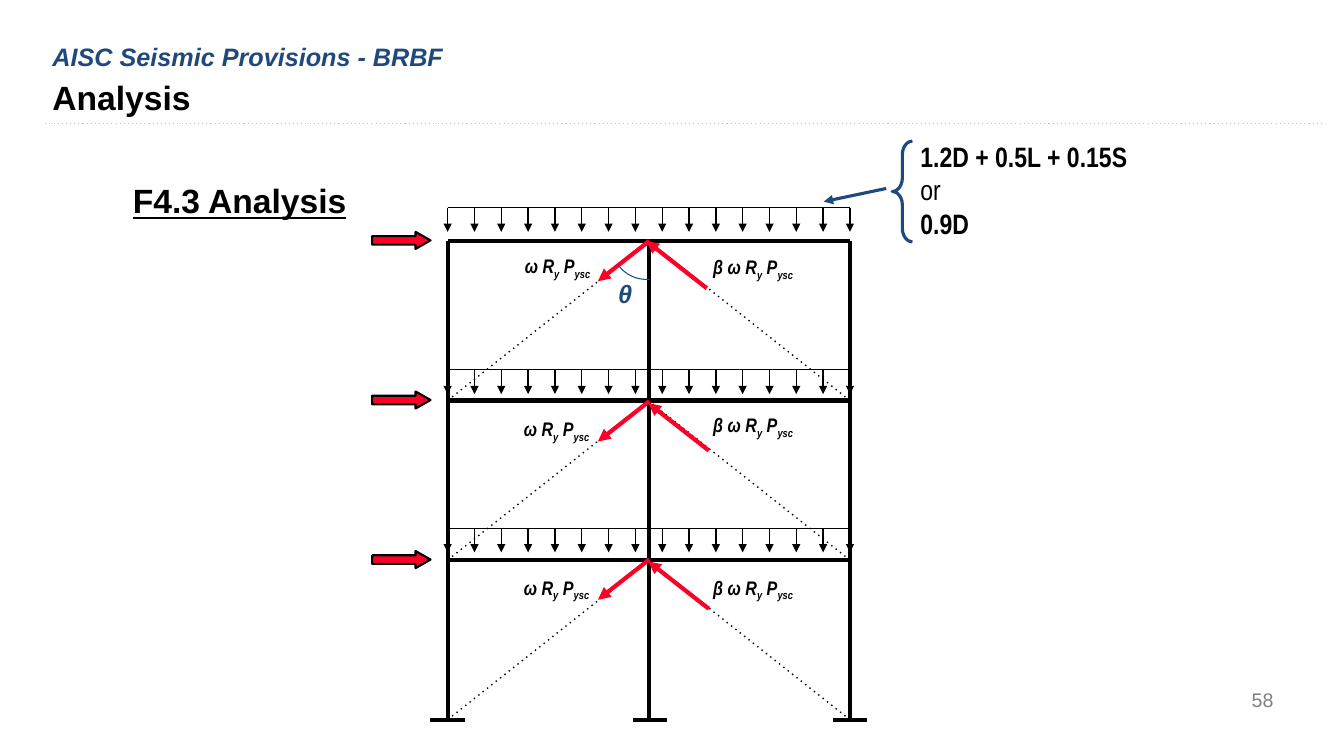
import pptx
import pptx.dml.color
import pptx.enum.shapes
import pptx.enum.text
import pptx.oxml
import pptx.oxml.ns
import pptx.util
from pptx.util import Inches

BLACK, NAVY, RED, GREY = "000000", "1F497D", "FC0128", "7F7F7F"
SHAPE = pptx.enum.shapes.MSO_SHAPE
ALIGN = pptx.enum.text.PP_ALIGN
ANCHOR = pptx.enum.text.MSO_ANCHOR
TOP, BASE, STORIES = 2.39, 7.14, 3
LEFT, CENTER, RIGHT = 4.44, 6.44, 8.43
STORY = (BASE - TOP) / STORIES


def color(value):
    """Turn a hex string into a colour."""
    return pptx.dml.color.RGBColor.from_string(value)


def add_run(para, text, size, tint=BLACK, font="Arial", bold=True, italic=False,
            underline=False, subscript=False):
    """Add one formatted run to a paragraph."""
    span = para.add_run()
    span.text = text
    span.font.size = pptx.util.Pt(size)
    span.font.name = font
    span.font.bold = bold
    span.font.italic = italic
    span.font.underline = underline
    span.font.color.rgb = color(tint)
    if subscript:
        span._r.get_or_add_rPr().set("baseline", "-25000")


def set_frame(shape, box, align=ALIGN.LEFT, anchor=ANCHOR.TOP):
    """Place a text shape in its box and return its first paragraph."""
    shape.left, shape.top, shape.width, shape.height = map(Inches, box)
    frame = shape.text_frame
    frame.word_wrap = True
    frame.auto_size = pptx.enum.text.MSO_AUTO_SIZE.NONE
    frame.vertical_anchor = anchor
    para = frame.paragraphs[0]
    para.alignment = align
    para.space_before = pptx.util.Pt(0)
    return para


def add_text(page, box, align=ALIGN.LEFT, anchor=ANCHOR.TOP):
    """Add a text box and return its first paragraph."""
    return set_frame(page.shapes.add_textbox(*map(Inches, box)), box, align, anchor)


def add_line(shapes, start, end, width=3, tint=BLACK, dotted=False, arrow=None):
    """Add a straight line, arrow being headEnd or tailEnd."""
    line = shapes.add_connector(pptx.enum.shapes.MSO_CONNECTOR.STRAIGHT,
                                *map(Inches, (*start, *end)))
    line.line.color.rgb = color(tint)
    line.line.width = pptx.util.Pt(width)
    properties = line.element.spPr
    outline = properties.find(pptx.oxml.ns.qn("a:ln"))
    namespace = pptx.oxml.ns.nsdecls("a")
    if dotted:
        outline.append(pptx.oxml.parse_xml(f'<a:prstDash {namespace} val="dot"/>'))
    if arrow:
        outline.append(pptx.oxml.parse_xml(f'<a:{arrow} {namespace} type="triangle"/>'))
    properties.append(pptx.oxml.parse_xml(f"<a:effectLst {namespace}/>"))


def add_preset(page, kind, box, adjustments, tint, width, fill=None):
    """Add an outlined preset shape, filled if a fill is given."""
    shape = page.shapes.add_shape(kind, *map(Inches, box))
    shape.shadow.inherit = False
    for index, value in enumerate(adjustments):
        shape.adjustments[index] = value
    if fill:
        shape.fill.solid()
        shape.fill.fore_color.rgb = color(fill)
    else:
        shape.fill.background()
    shape.line.color.rgb = color(tint)
    shape.line.width = pptx.util.Pt(width)
    return shape


def add_header(page, left, top, width):
    """Fill the title and the line of context above it."""
    add_line(page.shapes, (left + 0.03, top + 0.87), (left + 12.7, top + 0.87),
             0.75, "BFBFBF", dotted=True)
    para = set_frame(page.shapes.title, (left, top + 0.35, width, 0.44))
    add_run(para, "Analysis", 24)
    para = set_frame(page.placeholders[1], (left, top, width, 0.31))
    bullet = para._p.get_or_add_pPr()
    bullet.set("marL", "0")
    bullet.set("indent", "0")
    bullet.append(pptx.oxml.parse_xml(f'<a:buNone {pptx.oxml.ns.nsdecls("a")}/>'))
    add_run(para, "AISC Seismic Provisions - BRBF", 18, NAVY, italic=True)


def add_bay(page, outer, inner):
    """Draw the columns, beams and dotted braces of one bay."""
    bay = page.shapes.add_group_shape().shapes
    for story in reversed(range(STORIES)):
        upper = TOP + story * STORY
        lower = upper + STORY
        add_line(bay, (outer, lower), (outer, upper))
        add_line(bay, (outer, upper), (inner, upper))
        add_line(bay, (inner, upper), (outer, lower), 1, dotted=True)


def add_frame(page):
    """Draw the two bays, the middle column and the supports."""
    for story in range(STORIES):
        upper = TOP + story * STORY
        add_line(page.shapes, (CENTER, upper + STORY), (CENTER, upper))
    add_bay(page, LEFT, CENTER)
    add_bay(page, RIGHT, CENTER - 0.01)
    for column in (LEFT, CENTER + 0.01, RIGHT):
        add_line(page.shapes, (column - 0.17, BASE), (column + 0.17, BASE))


def add_gravity_load(page, left, top, width):
    """Draw a row of evenly spaced downward arrows under a line."""
    load = page.shapes.add_group_shape().shapes
    spaces = 15
    for index in range(spaces + 1):
        across = left + index * width / spaces
        add_line(load, (across, top), (across, top + 0.24), 1, arrow="tailEnd")
    add_line(load, (left, top), (left + width, top), 0.75)


def add_force_label(page, left, top, factor):
    """Write a brace force with its subscripts."""
    para = add_text(page, (left, top, 1.06, 0.34), ALIGN.CENTER)
    for text, subscript in ((f"{factor} R", False), ("y", True), (" P", False), ("ysc", True)):
        add_run(para, text, 14, font="Arial Narrow", italic=True, subscript=subscript)


def add_brace_forces(page, tension, compression, tension_label, compression_label):
    """Draw both brace forces of one story at their nodes."""
    x, y = tension
    add_line(page.shapes, tension, (x - 0.51, y + 0.4), 3, RED, arrow="tailEnd")
    x, y = compression
    add_line(page.shapes, compression, (x + 0.6, y + 0.47), 3, RED, arrow="headEnd")
    add_force_label(page, *tension_label, "ω")
    add_force_label(page, *compression_label, "β ω")


def add_angle(page, left, top):
    """Mark the angle between brace and column."""
    para = add_text(page, (left, top, 0.92, 0.4), ALIGN.CENTER)
    add_run(para, "θ", 18, NAVY, italic=True)
    arc = add_preset(page, SHAPE.ARC, (left + 0.33, top - 0.56, 0.66, 0.62),
                     (146.733, 186.392), "1C477D", 0.75)
    arc.rotation = 197.7


def add_load_case(page, left, top):
    """Write the load combinations with their brace and pointer."""
    para = add_text(page, (left, top, 2.88, 1.11))
    add_run(para, "1.2D + 0.5L + 0.15S", 20, font="Arial Narrow")
    para.add_line_break()
    add_run(para, "or", 20, font="Arial Narrow", bold=False)
    para.add_line_break()
    add_run(para, "0.9D", 20, font="Arial Narrow")
    add_preset(page, SHAPE.LEFT_BRACE, (left - 0.18, top + 0.07, 0.2, 1),
               (0.668, 0.5), NAVY, 2.25)
    add_line(page.shapes, (left - 0.24, top + 0.54), (left - 0.86, top + 0.67),
             2.25, NAVY, arrow="tailEnd")


def add_analysis_slide(deck):
    """Build the braced frame analysis slide."""
    page = deck.slides.add_slide(deck.slide_layouts[1])
    add_header(page, 0.42, 0.36, 11.97)
    add_run(add_text(page, (9.62, 6.74, 3.11, 0.4), ALIGN.RIGHT, ANCHOR.MIDDLE),
            "58", 14, GREY, bold=False)
    add_run(add_text(page, (1.22, 1.74, 11.67, 0.5)), "F4.3 Analysis", 24, underline=True)
    add_frame(page)
    for story in range(STORIES):
        add_preset(page, SHAPE.RIGHT_ARROW, (3.69, TOP - 0.09 + story * STORY, 0.58, 0.17),
                   (0.5, 0.875), BLACK, 1.5, RED)
    add_brace_forces(page, (CENTER, 2.39), (6.41, 2.39), (5, 2.47), (6.94, 2.48))
    add_brace_forces(page, (CENTER, 3.98), (6.43, 4), (4.99, 4.09), (6.94, 4.05))
    add_brace_forces(page, (CENTER, 5.55), (6.43, 5.57), (4.99, 5.66), (6.94, 5.66))
    for top in (2.06, 3.67, 5.24):
        add_gravity_load(page, LEFT, top, RIGHT - LEFT)
    add_angle(page, 5.74, 2.71)
    add_load_case(page, 9.03, 1.33)


def main():
    """Create and save the deck."""
    deck = pptx.Presentation()
    deck.slide_width, deck.slide_height = Inches(13.33), Inches(7.5)
    add_analysis_slide(deck)
    deck.save("out.pptx")


if __name__ == "__main__":
    main()
